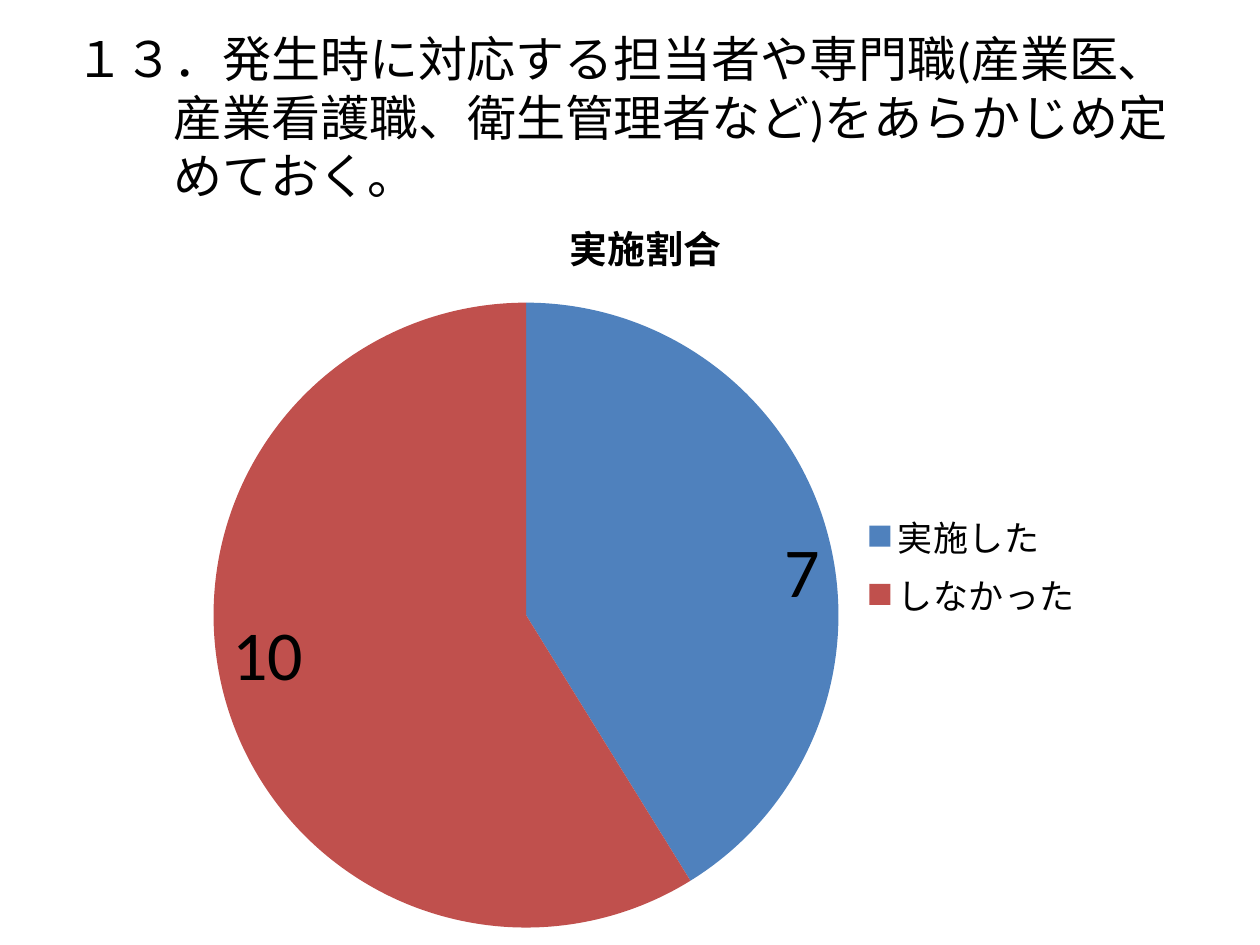
from pptx import Presentation
from pptx.chart import data as chart_data
from pptx.dml.color import RGBColor
from pptx.enum import chart as chart_enum, text
from pptx.util import Pt

BLACK = RGBColor(0x00, 0x00, 0x00)
BLUE = RGBColor(0x4F, 0x81, 0xBD)
RED = RGBColor(0xC0, 0x50, 0x4D)


class SlideBuilder:
    """Hold the text style and the current slide, and add its elements."""

    def __init__(self, presentation, font_name):
        self.font_name = font_name
        self.slide = presentation.slides.add_slide(presentation.slide_layouts[5])

    def apply(self, target, **values):
        for name, value in values.items():
            setattr(target, name, value)

    def style(self, font, size, bold=False):
        self.apply(font, name=self.font_name, size=Pt(size), bold=bold)
        font.color.rgb = BLACK

    def title(self, wording, left, top, width, height, size, indent):
        shape = self.slide.shapes.title
        self.apply(shape, left=Pt(left), top=Pt(top), width=Pt(width), height=Pt(height))
        frame = shape.text_frame
        self.apply(frame, text=wording, word_wrap=True,
                   auto_size=text.MSO_AUTO_SIZE.NONE,
                   vertical_anchor=text.MSO_ANCHOR.MIDDLE)
        paragraph = frame.paragraphs[0]
        paragraph.alignment = text.PP_ALIGN.LEFT
        properties = paragraph._p.get_or_add_pPr()
        properties.set("marL", str(Pt(indent)))
        properties.set("indent", str(-Pt(indent)))
        self.style(paragraph.runs[0].font, size)

    def pie(self, name, slices, left, top, width, height):
        data = chart_data.CategoryChartData()
        data.categories = [category for category, _, _ in slices]
        data.add_series(name, [value for _, value, _ in slices])
        chart = self.slide.shapes.add_chart(
            chart_enum.XL_CHART_TYPE.PIE,
            Pt(left), Pt(top), Pt(width), Pt(height), data).chart
        self.style(chart.font, 18)
        chart.has_title = True
        chart.chart_title.include_in_layout = False
        chart.chart_title.text_frame.text = name
        heading = chart.chart_title.text_frame.paragraphs[0].runs[0]
        self.style(heading.font, 21.6, bold=True)
        chart.has_legend = True
        self.apply(chart.legend, include_in_layout=False,
                   position=chart_enum.XL_LEGEND_POSITION.RIGHT)
        self.style(chart.legend.font, 20)

        plot = chart.plots[0]
        self.apply(plot, vary_by_categories=True, has_data_labels=True)
        self.apply(plot.data_labels, show_value=True, show_percentage=False,
                   position=chart_enum.XL_LABEL_POSITION.INSIDE_END)
        self.style(plot.data_labels.font, 40)
        for index, (_, _, color) in enumerate(slices):
            fill = plot.series[0].points[index].format.fill
            fill.solid()
            fill.fore_color.rgb = color


def main():
    presentation = Presentation()
    presentation.slide_width, presentation.slide_height = Pt(720), Pt(540)
    builder = SlideBuilder(presentation, "Calibri")
    builder.title(
        "１３．発生時に対応する担当者や専門職(産業医、産業看護職、衛生管理者など)をあらかじめ定めておく。",
        36, 21.6, 648, 90, size=28, indent=56)
    builder.pie("実施割合", [("実施した", 7, BLUE), ("しなかった", 10, RED)],
                111, 106, 516, 434)
    presentation.save("out.pptx")


if __name__ == "__main__":
    main()
